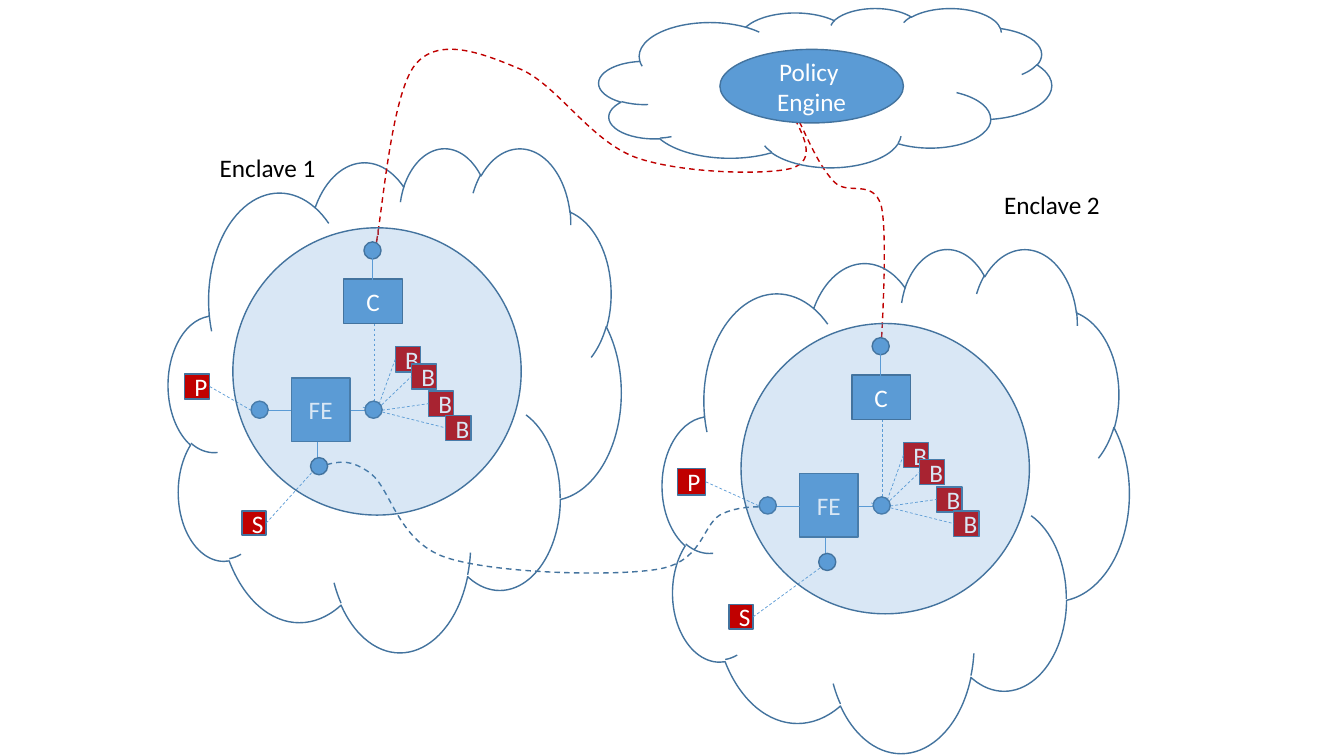
from pptx import Presentation
from pptx.dml.color import RGBColor
from pptx.enum.dml import MSO_LINE
from pptx.enum.shapes import MSO_CONNECTOR, MSO_SHAPE
from pptx.enum.text import MSO_ANCHOR, MSO_AUTO_SIZE, PP_ALIGN
from pptx.oxml.ns import qn
from pptx.util import Inches, Pt
from lxml.etree import SubElement

INK = {"blue": "5B9BD5", "edge": "43739E", "red": "C00000",
       "white": "FFFFFF", "black": "000000"}

deck = Presentation()
deck.slide_width, deck.slide_height = Inches(13.33), Inches(7.5)
slide = deck.slides.add_slide(deck.slide_layouts[6])
parts = slide.shapes

# Every length counts cells of a grid of 1333 columns by 750 rows
COL, ROW = deck.slide_width / 1333, deck.slide_height / 750
PORT, BOX = 17, 25


def tone(name):
    return RGBColor.from_string(INK[name])


def cells(x, y):
    return round(x * COL), round(y * ROW)


def stroke(item, color="edge", width=1, dash=False):
    item.line.color.rgb = tone(color)
    item.line.width = Pt(width)
    if dash:
        item.line.dash_style = MSO_LINE.DASH


def text(item, words, color="white", align=PP_ALIGN.CENTER, anchor=MSO_ANCHOR.MIDDLE):
    frame = item.text_frame
    frame.text = words
    frame.vertical_anchor = anchor
    for para in frame.paragraphs:
        para.alignment = align
        for run in para.runs:
            run.font.name, run.font.size = "Calibri", Pt(18)
            run.font.color.rgb = tone(color)


def shape(kind, x, y, w, h, fill=None, words=None, alpha=None):
    item = parts.add_shape(kind, *cells(x, y), *cells(w, h))
    item.shadow.inherit = False
    stroke(item)
    if fill:
        item.fill.solid()
        item.fill.fore_color.rgb = tone(fill)
    else:
        item.fill.background()
    if alpha:
        color = item._element.spPr.find(f"{qn('a:solidFill')}/{qn('a:srgbClr')}")
        SubElement(color, qn("a:alpha")).set("val", str(alpha * 1000))
    if words:
        text(item, words)


def cloud(x, y, w, h):
    shape(MSO_SHAPE.CLOUD, x, y, w, h)


def block(x, y, w, h, words, fill="red"):
    shape(MSO_SHAPE.RECTANGLE, x, y, w, h, fill, words)


def port(x, y):
    shape(MSO_SHAPE.OVAL, x, y, PORT, PORT, "blue")


def link(x1, y1, x2, y2, dash=True):
    item = parts.add_connector(MSO_CONNECTOR.STRAIGHT, *cells(x1, y1), *cells(x2, y2))
    SubElement(item._element.spPr, qn("a:effectLst"))
    stroke(item, "blue", 0.5, dash)


def label(x, y, words):
    item = parts.add_textbox(*cells(x, y), *cells(116, 40))
    item.text_frame.word_wrap = False
    item.text_frame.auto_size = MSO_AUTO_SIZE.SHAPE_TO_FIT_TEXT
    text(item, words, color="black", align=PP_ALIGN.LEFT, anchor=MSO_ANCHOR.TOP)


def curve(box, start, *arcs, tail=None, color="red"):
    """Dashed path in a box; an arc is two control points and an end."""
    x, y, w, h = box
    pen = parts.build_freeform(*cells(x, y), scale=1.0)
    pen.add_line_segments([cells(x + w, y + h)], close=False)
    item = pen.convert_to_shape()
    item.shadow.inherit = False
    item.fill.background()
    stroke(item, color, dash=True)

    # Replace the diagonal with the arcs
    track = next(item._element.iter(qn("a:path")))
    for step in list(track):
        track.remove(step)

    def move(kind, *spots):
        step = SubElement(track, qn(kind))
        for px, py in zip(spots[::2], spots[1::2]):
            dx, dy = cells(px - x, py - y)
            spot = SubElement(step, qn("a:pt"))
            spot.set("x", str(dx))
            spot.set("y", str(dy))

    move("a:moveTo", *start)
    for arc in arcs:
        move("a:cubicBezTo", *arc)
    if tail:
        move("a:lnTo", *tail)


def enclave(x, y, high, peer, sink):
    """Core and outer blocks; x and y are the corner of the core circle."""
    mid = y + 181

    # Forwarding element and its stack of B blocks
    block(x + 58, y + 149, 58, 63, "FE", fill="blue")
    stack = [(161, 118), (177, 135), (194, 162), (211, 186)]
    for dx, dy in stack:
        block(x + dx, y + dy, BOX, BOX, "B")
    roots = [(145, 175), (144, 179), (148, 181), (129, 178)]
    for (rx, ry), (dx, dy) in zip(roots, stack):
        link(x + rx, y + ry, x + dx, y + dy + BOX / 2)

    # Ports on either side
    link(x + 35, mid, x + 58, mid, dash=False)
    port(x + 18, y + 172)
    link(x + 140, y + 95, x + 140, y + 177)
    link(x + 84, y + 233, x + 84, y + 213, dash=False)
    link(x + 117, mid, x + 140, mid, dash=False)
    port(x + 131, y + 172)

    # Outer P and S blocks
    for (bx, by, w, h), words, (ex, ey) in ((peer, "P", (18, 181)),
                                            (sink, "S", (79, 242))):
        block(bx, by, w, h, words)
        link(bx + w, by + h / 2, x + ex, y + ey)

    # Core circle, controller and its port
    shape(MSO_SHAPE.OVAL, x, y, 286, high, "blue", alpha=23)
    block(x + 110, y + 51, 58, 44, "C", fill="blue")
    port(x + 130, y + 14)
    link(x + 138, y + 59, x + 138, y + 28, dash=False)
    port(x + 77, y + 228)


def paths():
    # Between the enclaves
    curve((324, 458, 434, 110), (324, 461),
          (336, 458, 348, 455, 368, 470), (388, 486, 395, 537, 442, 553),
          (490, 569, 606, 572, 651, 565), (697, 558, 696, 522, 714, 511),
          (732, 501, 758, 503, 758, 503), color="edge")
    # From the policy engine to each controller
    curve((793, 121, 84, 222), (793, 121),
          (804, 144, 814, 167, 828, 181), (841, 194, 866, 177, 874, 204),
          (881, 231, 874, 343, 874, 343), tail=(876, 342))
    curve((371, 49, 429, 203), (784, 110),
          (797, 134, 811, 159, 785, 167), (759, 174, 674, 172, 630, 156),
          (585, 139, 553, 85, 517, 69), (481, 54, 436, 35, 412, 64),
          (388, 93, 379, 213, 373, 242), (367, 270, 375, 233, 375, 233),
          tail=(375, 228))


def policy(x, y):
    cloud(x, y, 449, 158)
    shape(MSO_SHAPE.OVAL, x + 120, y + 41, 182, 73, "blue", "Policy \nEngine")


cloud(167, 146, 449, 500)
paths()
enclave(231, 226, 285, peer=(183, 371, 25, 25), sink=(240, 507, 24, 24))
cloud(657, 246, 463, 500)
enclave(735, 321, 288, peer=(672, 465, 28, 26), sink=(723, 600, 24, 24))
policy(594, 8)
label(208, 146, "Enclave 1")
label(986, 183, "Enclave 2")

deck.save("out.pptx")
